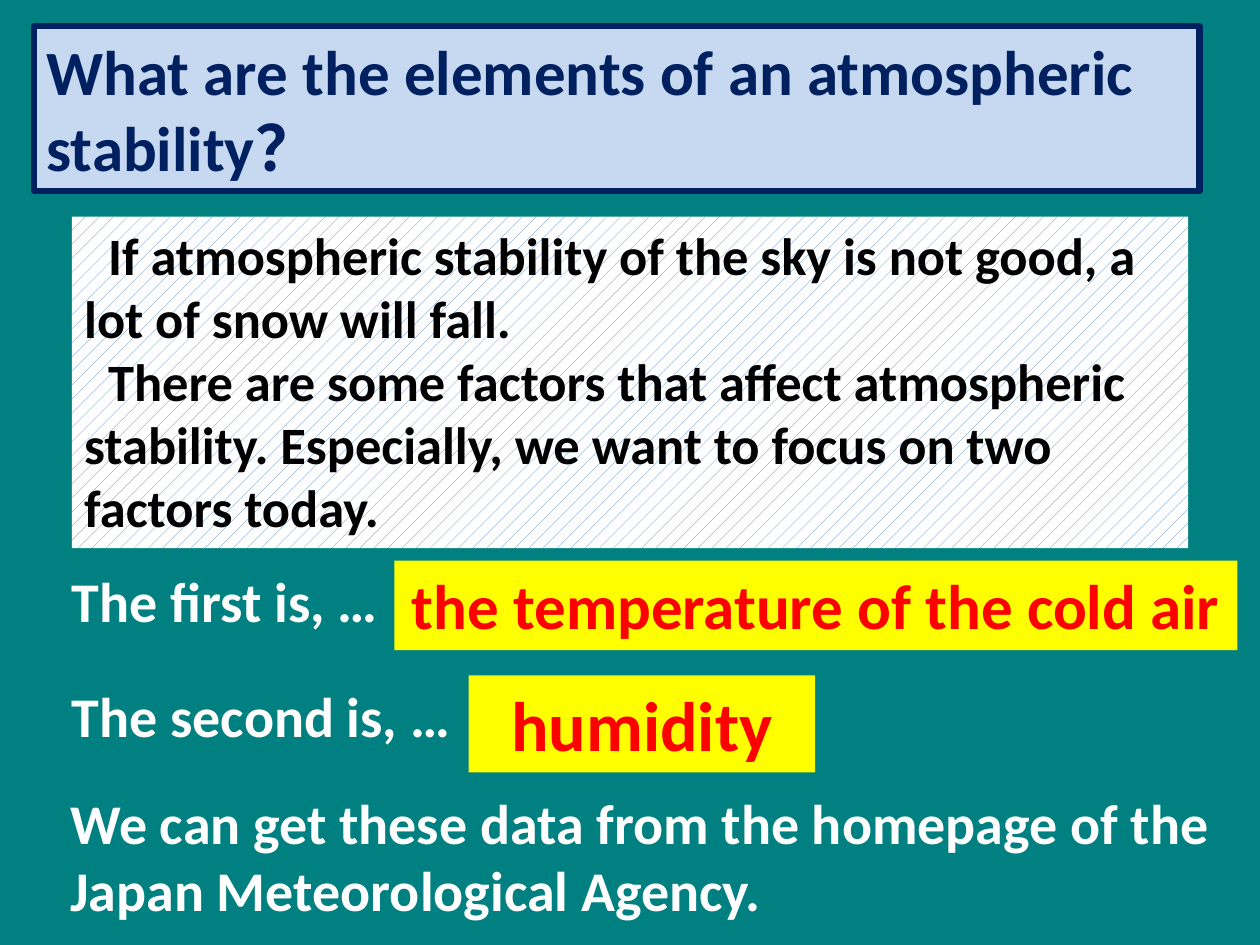
from pptx import Presentation
from pptx.dml.color import RGBColor
from pptx.enum.dml import MSO_PATTERN
from pptx.enum.shapes import MSO_SHAPE
from pptx.enum.text import MSO_ANCHOR, MSO_AUTO_SIZE, PP_ALIGN
from pptx.util import Inches, Pt

RECT = MSO_SHAPE.RECTANGLE
DOTS = MSO_PATTERN.PERCENT_10
TOP = MSO_ANCHOR.TOP
GROW = MSO_AUTO_SIZE.SHAPE_TO_FIT_TEXT
LEFT, CENTER = PP_ALIGN.LEFT, PP_ALIGN.CENTER

THEME = {
    "font": "Calibri",
    "teal": RGBColor(0x00, 0x80, 0x80),
    "navy": RGBColor(0x00, 0x20, 0x60),
    "pale": RGBColor(0xC6, 0xD9, 0xF1),
    "blue": RGBColor(0x4F, 0x81, 0xBD),
    "white": RGBColor(0xFF, 0xFF, 0xFF),
    "black": RGBColor(0x00, 0x00, 0x00),
    "yellow": RGBColor(0xFF, 0xFF, 0x00),
    "red": RGBColor(0xFF, 0x00, 0x00),
    "title": Pt(36),
    "body": Pt(30),
    "lead": Pt(32),
    "answer": Pt(36),
    "key": Pt(40),
}

prs = Presentation()
prs.slide_width, prs.slide_height = Inches(10), Inches(7.5)
COL, ROW = prs.slide_width / 100, prs.slide_height / 75
s = prs.slides.add_slide(prs.slide_layouts[6])
s.background.fill.solid()
s.background.fill.fore_color.rgb = THEME["teal"]

FIRST, SECOND = 44.5, 53.6
BOXES = [
    ((2.7, 2.1, 92.5, 13.1), "pale", "title", "navy", LEFT, 0,
     ["What are the elements of an atmospheric stability？"]),
    ((5.7, 17.2, 88.6, 26.3), "pattern", "body", "black", LEFT, 1.9,
     ["If atmospheric stability of the sky is not good, a lot of snow will fall.",
      "There are some factors that affect atmospheric stability. "
      "Especially, we want to focus on two factors today."]),
    ((37.2, SECOND, 27.5, 7.7), "yellow", "key", "red", CENTER, 0, ["humidity"]),
    ((31.3, FIRST, 66.9, 7.1), "yellow", "answer", "red", CENTER, 0,
     ["the temperature of the cold air"]),
    ((4.7, FIRST, 34.5, 6.4), None, "lead", "white", LEFT, 0, ["The first is, …"]),
    ((4.7, SECOND, 34.5, 6.4), None, "lead", "white", LEFT, 0, ["The second is, …"]),
    ((4.6, 62.1, 93.6, 11.8), None, "lead", "white", LEFT, 0,
     ["We can get these data from the homepage of the",
      "Japan Meteorological Agency."]),
]

for (x, y, w, h), fill, size, color, align, indent, lines in BOXES:
    at = [round(v) for v in (x * COL, y * ROW, w * COL, h * ROW)]
    if fill:
        sp = s.shapes.add_shape(RECT, *at)
        sp.shadow.inherit = False
        sp.line.fill.background()
        if fill == "pattern":
            sp.fill.patterned()
            sp.fill.pattern = DOTS
            sp.fill.fore_color.rgb = THEME["blue"]
            sp.fill.back_color.rgb = THEME["white"]
        else:
            sp.fill.solid()
            sp.fill.fore_color.rgb = THEME[fill]
        if size == "title":
            sp.line.color.rgb = THEME["navy"]
            sp.line.width = Pt(3.5)
    else:
        sp = s.shapes.add_textbox(*at)
    tf = sp.text_frame
    for key, value in {"word_wrap": True, "auto_size": GROW, "vertical_anchor": TOP}.items():
        setattr(tf, key, value)
    tf.text = "\n".join(lines)
    for p in tf.paragraphs:
        p.alignment = align
        if indent:
            p._p.get_or_add_pPr().set("indent", str(round(indent * COL)))
        r = p.runs[0]
        r.font.color.rgb = THEME[color]
        for key, value in {"name": THEME["font"], "size": THEME[size], "bold": True}.items():
            setattr(r.font, key, value)

prs.save("out.pptx")
